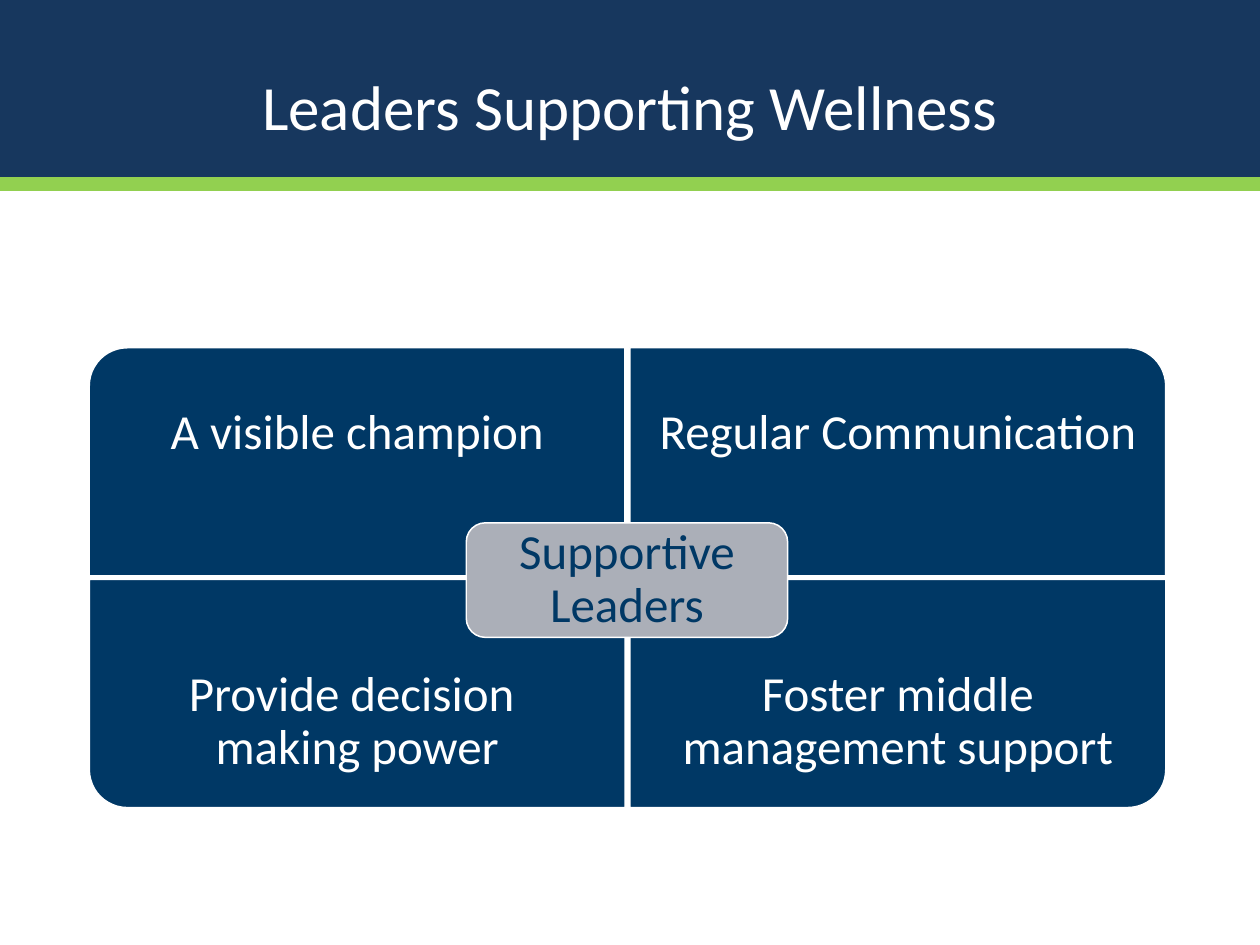
from lxml import etree
from pptx import Presentation
from pptx import util as u
from pptx.dml.color import RGBColor
from pptx.enum import shapes, text
from pptx.oxml.ns import qn

COLOURS = {
    "header": "17375E",
    "accent": "92D050",
    "quadrant": "003865",
    "centre": "ABAFB8",
    "white": "FFFFFF",
}
SLIDE_WIDTH, SLIDE_HEIGHT = 25.4, 19.05
HEADER_HEIGHT = 3.71
GRID_LEFT, GRID_TOP = 1.8, 7.01
TILE_WIDTH, TILE_HEIGHT = 10.8, 4.6
STEP_X, STEP_Y = 10.9, 4.67
LABEL_HEIGHT = 3.45

# Column, row, rotation that turns the rounded corner outwards, lines of the label
QUADRANTS = [
    (0, 0, 270, ["A visible champion"]),
    (1, 0, 0, ["Regular Communication"]),
    (0, 1, 180, ["Provide decision ", "making power"]),
    (1, 1, 90, ["Foster middle management support"]),
]


class SlideBuilder:
    def __init__(self, slide, font="Calibri", outline=0.85):
        self.slide = slide
        self.font = font
        self.outline = outline

    def colour(self, name):
        return RGBColor.from_string(COLOURS[name])

    def block(self, kind, left, top, width, height, fill, rotation=0, outlined=True):
        """Add a filled shape; the box given is the one seen after rotation."""
        if rotation % 180:
            left += (width - height) / 2
            top += (height - width) / 2
            width, height = height, width
        shape = self.slide.shapes.add_shape(
            kind, u.Cm(left), u.Cm(top), u.Cm(width), u.Cm(height))
        shape.rotation = rotation
        shape.shadow.inherit = False
        shape.fill.solid()
        shape.fill.fore_color.rgb = self.colour(fill)
        if outlined:
            shape.line.color.rgb = self.colour("white")
            shape.line.width = u.Pt(self.outline)
        else:
            shape.line.fill.background()

    def label(self, lines, left, top, width, height, size=28, colour="white",
              inset=0.55, spacing=0.9):
        box = self.slide.shapes.add_textbox(
            u.Cm(left), u.Cm(top), u.Cm(width), u.Cm(height))
        frame = box.text_frame
        frame.word_wrap = True
        frame.vertical_anchor = text.MSO_ANCHOR.MIDDLE
        frame.margin_left = frame.margin_right = u.Cm(inset)
        frame.margin_top = frame.margin_bottom = u.Cm(inset)
        paragraph = frame.paragraphs[0]
        paragraph.alignment = text.PP_ALIGN.CENTER
        paragraph.line_spacing = spacing
        for index, line in enumerate(lines):
            if index:
                paragraph.add_line_break()
            run = paragraph.add_run()
            run.text = line
            run.font.name = self.font
            run.font.size = u.Pt(size)
            run.font.color.rgb = self.colour(colour)

    def line(self, start_x, start_y, end_x, end_y, colour, width):
        connector = self.slide.shapes.add_connector(
            shapes.MSO_CONNECTOR.STRAIGHT,
            u.Cm(start_x), u.Cm(start_y), u.Cm(end_x), u.Cm(end_y))
        connector.line.color.rgb = self.colour(colour)
        connector.line.width = u.Pt(width)
        etree.SubElement(connector._element.spPr, qn("a:effectLst"))


def main():
    presentation = Presentation()
    presentation.slide_width = u.Cm(SLIDE_WIDTH)
    presentation.slide_height = u.Cm(SLIDE_HEIGHT)
    slide = presentation.slides.add_slide(presentation.slide_layouts[6])
    builder = SlideBuilder(slide)
    kinds = shapes.MSO_SHAPE

    builder.block(kinds.RECTANGLE, 0, 0, SLIDE_WIDTH, HEADER_HEIGHT, "header",
                  outlined=False)
    builder.label(["Leaders Supporting Wellness"], 1.27, 0.53, 22.86, 3.18,
                  size=36, inset=0.13, spacing=1.0)

    for column, row, rotation, lines in QUADRANTS:
        left = GRID_LEFT + column * STEP_X
        top = GRID_TOP + row * STEP_Y
        builder.block(kinds.ROUND_1_RECTANGLE, left, top, TILE_WIDTH, TILE_HEIGHT,
                      "quadrant", rotation)
        label_top = top + row * (TILE_HEIGHT - LABEL_HEIGHT)
        builder.label(lines, left, label_top, TILE_WIDTH, LABEL_HEIGHT)

    builder.block(kinds.ROUNDED_RECTANGLE, 9.4, 10.54, 6.48, 2.31, "centre")
    builder.label(["Supportive Leaders"], 9.52, 10.66, 6.24, 2.07,
                  colour="quadrant", inset=0.3)

    builder.line(0, HEADER_HEIGHT, SLIDE_WIDTH, HEADER_HEIGHT, "accent", 8)
    presentation.save("out.pptx")


if __name__ == "__main__":
    main()
